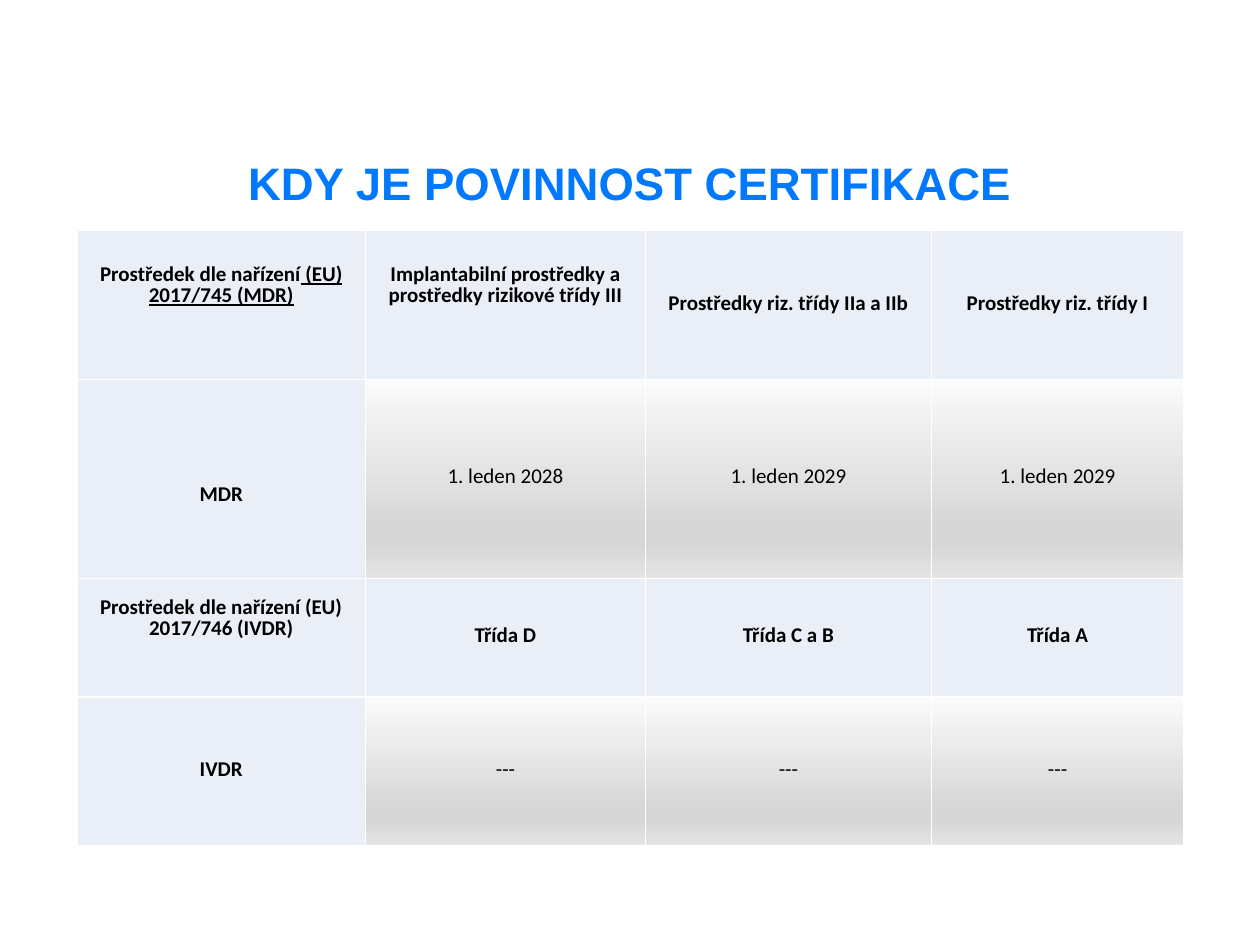
from dataclasses import dataclass

from lxml.etree import SubElement
from pptx import Presentation
from pptx.dml.color import RGBColor
from pptx.enum.text import MSO_ANCHOR, PP_ALIGN
from pptx.oxml.ns import qn
from pptx.slide import Slide
from pptx.table import _Cell
from pptx.util import Cm, Pt


@dataclass(frozen=True)
class Theme:
    title: str = "0079FF"
    text: str = "000000"
    line: str = "FFFFFF"
    head: str = "EAEFF7"
    fade: tuple = ((0, "FAFAFA"), (74, "D7D7D7"), (83, "D7D7D7"), (100, "E4E4E4"))
    title_font: str = "Arial"
    font: str = "Calibri"
    title_size: Pt = Pt(26)
    size: Pt = Pt(12)
    border: Pt = Pt(1)


@dataclass(frozen=True)
class Item:
    text: str
    under: str = ""
    head: bool = True
    top: float = 0
    foot: float = 0


THEME = Theme()
LIFT = 0.71
WIDTHS = (5.82, 5.64, 5.77, 5.08)
HEIGHTS = (3.0, 4.01, 2.39, 3.0)


def date(text: str) -> Item:
    return Item(text, head=False)


ROWS = (
    (
        Item("Prostředek dle nařízení", " (EU) 2017/745 (MDR)", foot=LIFT),
        Item("Implantabilní prostředky a prostředky rizikové třídy III", foot=LIFT),
        Item("Prostředky riz. třídy IIa a IIb"),
        Item("Prostředky riz. třídy I"),
    ),
    (
        Item("MDR", top=LIFT),
        date("1. leden 2028"),
        date("1. leden 2029"),
        date("1. leden 2029"),
    ),
    (
        Item("Prostředek dle nařízení (EU) 2017/746 (IVDR)", foot=LIFT),
        Item("Třída D"),
        Item("Třída C a B"),
        Item("Třída A"),
    ),
    (Item("IVDR"), date("---"), date("---"), date("---")),
)


def add_title(slide: Slide, text: str) -> None:
    box = slide.shapes.add_textbox(Cm(1.75), Cm(3.05), Cm(21.9), Cm(1.4))
    frame = box.text_frame
    frame.word_wrap = True
    frame.vertical_anchor = MSO_ANCHOR.MIDDLE
    line = frame.paragraphs[0]
    line.text = text
    line.alignment = PP_ALIGN.CENTER
    line.line_spacing = 0.9
    font = line.font
    font.name, font.size, font.bold = THEME.title_font, THEME.title_size, True
    font.color.rgb = RGBColor.from_string(THEME.title)


def add_color(node, color: str) -> None:
    SubElement(node, qn("a:srgbClr"), val=color)


def add_edges(cell: _Cell) -> None:
    props = cell._tc.get_or_add_tcPr()
    for side in ("lnL", "lnR", "lnT", "lnB"):
        edge = SubElement(props, qn(f"a:{side}"), w=str(int(THEME.border)))
        add_color(SubElement(edge, qn("a:solidFill")), THEME.line)


def add_fade(cell: _Cell) -> None:
    """Fill the cell with the grey gradient, top to bottom."""
    cell.fill.gradient()
    cell.fill.gradient_angle = 270
    stops = cell._tc.tcPr.find(".//" + qn("a:gsLst"))
    for stop in list(stops):
        stops.remove(stop)
    for place, color in THEME.fade:
        add_color(SubElement(stops, qn("a:gs"), pos=str(place * 1000)), color)


def fill_cell(cell: _Cell, item: Item) -> None:
    add_edges(cell)
    if item.head:
        cell.fill.solid()
        cell.fill.fore_color.rgb = RGBColor.from_string(THEME.head)
    else:
        add_fade(cell)
    cell.vertical_anchor = MSO_ANCHOR.MIDDLE
    cell.margin_left = cell.margin_right = Cm(0.24)
    cell.margin_top, cell.margin_bottom = Cm(item.top), Cm(item.foot)
    line = cell.text_frame.paragraphs[0]
    line.text = item.text
    if item.under:
        run = line.add_run()
        run.text = item.under
        run.font.underline = True
    line.alignment = PP_ALIGN.CENTER
    line.line_spacing, line.space_after = Pt(12.1), Pt(8)
    font = line.font
    font.name, font.size, font.bold = THEME.font, THEME.size, item.head
    font.color.rgb = RGBColor.from_string(THEME.text)


def add_grid(slide: Slide) -> None:
    table = slide.shapes.add_table(
        len(HEIGHTS), len(WIDTHS), Cm(1.55), Cm(4.65),
        Cm(sum(WIDTHS)), Cm(sum(HEIGHTS)),
    ).table
    table.first_row = table.horz_banding = False
    for column, width in zip(table.columns, WIDTHS):
        column.width = Cm(width)
    for row, height, items in zip(table.rows, HEIGHTS, ROWS):
        row.height = Cm(height)
        for cell, item in zip(row.cells, items):
            fill_cell(cell, item)


def main() -> None:
    deck = Presentation()
    deck.slide_width, deck.slide_height = Cm(25.4), Cm(19.05)
    slide = deck.slides.add_slide(deck.slide_layouts[6])
    add_title(slide, "KDY JE POVINNOST CERTIFIKACE")
    add_grid(slide)
    deck.save("out.pptx")


if __name__ == "__main__":
    main()
